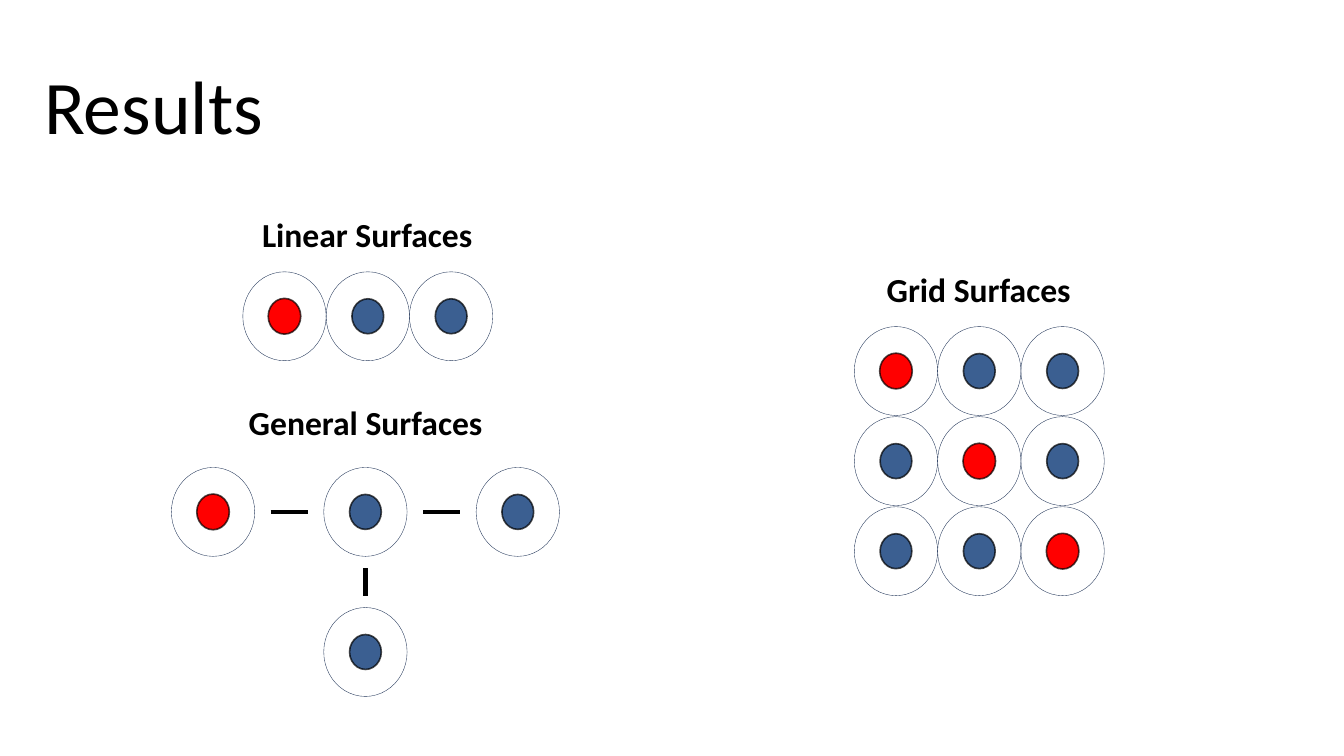
from dataclasses import dataclass

import pptx
import pptx.dml.color
import pptx.enum.shapes
import pptx.enum.text
import pptx.oxml.ns
import pptx.util
from lxml import etree

Cm = pptx.util.Cm
Pt = pptx.util.Pt
Color = pptx.dml.color.RGBColor
Align = pptx.enum.text.PP_ALIGN
Anchor = pptx.enum.text.MSO_ANCHOR


@dataclass(frozen=True)
class Theme:
    font: str = "Calibri"
    title_size: float = 54
    heading_size: float = 24
    ring_line: float = 0.25
    core_line: float = 1.17
    link_line: float = 3
    black: Color = Color(0x00, 0x00, 0x00)
    ring: Color = Color(0x1E, 0x32, 0x56)
    blue: Color = Color(0x3B, 0x5F, 0x91)
    red: Color = Color(0xFF, 0x00, 0x00)
    core_line_opacity: int = 69


THEME = Theme()


# All lengths below are centimetres
@dataclass(frozen=True)
class Box:
    left: float
    top: float
    width: float
    height: float


@dataclass(frozen=True)
class Particle:
    x: float
    y: float
    marked: bool = False


@dataclass(frozen=True)
class Link:
    start: Particle
    end: Particle
    length: float


RING_WIDTH, RING_HEIGHT = 2.1, 2.24
ROW_PITCH = 2.27

# Particle arrangements
LINEAR = [Particle(7.17 + i * RING_WIDTH, 7.97, i == 0) for i in range(3)]
GRID = [
    Particle(22.58 + column * RING_WIDTH, 9.35 + row * ROW_PITCH, row == column)
    for row in range(3)
    for column in range(3)
]
LEFT, CENTRE, RIGHT = [Particle(5.37 + i * 3.84, 12.9, i == 0) for i in range(3)]
BOTTOM = Particle(CENTRE.x, 16.43)
LINKS = [
    Link(LEFT, CENTRE, 0.94),
    Link(CENTRE, RIGHT, 0.94),
    Link(CENTRE, BOTTOM, 0.69),
]


def place(shape, box: Box) -> None:
    shape.left, shape.top = Cm(box.left), Cm(box.top)
    shape.width, shape.height = Cm(box.width), Cm(box.height)


def write_text(shape, text: str, size: float, bold: bool, align, anchor) -> None:
    frame = shape.text_frame
    frame.word_wrap = True
    frame.auto_size = pptx.enum.text.MSO_AUTO_SIZE.NONE
    frame.vertical_anchor = anchor
    paragraph = frame.paragraphs[0]
    paragraph.alignment = align
    paragraph.line_spacing = 0.9
    run = paragraph.add_run()
    run.text = text
    run.font.name = THEME.font
    run.font.size = Pt(size)
    run.font.bold = bold
    run.font.color.rgb = THEME.black


def write_heading(shape, text: str) -> None:
    write_text(shape, text, THEME.heading_size, True, Align.CENTER, Anchor.BOTTOM)
    shape.text_frame.paragraphs[0].space_before = Pt(10)


def add_heading(slide, text: str, box: Box) -> None:
    shape = slide.shapes.add_textbox(0, 0, 0, 0)
    place(shape, box)
    write_heading(shape, text)


def add_oval(slide, centre: Particle, width: float, height: float,
             line_color: Color, line_width: float):
    shape = slide.shapes.add_shape(
        pptx.enum.shapes.MSO_SHAPE.OVAL,
        Cm(centre.x - width / 2), Cm(centre.y - height / 2), Cm(width), Cm(height))
    shape.shadow.inherit = False
    shape.fill.background()
    shape.line.color.rgb = line_color
    shape.line.width = Pt(line_width)
    return shape


def add_particle(slide, particle: Particle) -> None:
    add_oval(slide, particle, RING_WIDTH, RING_HEIGHT, THEME.ring, THEME.ring_line)
    width, height = (0.82, 0.9) if particle.marked else (0.8, 0.88)
    core = add_oval(slide, particle, width, height, THEME.black, THEME.core_line)
    core.fill.solid()
    core.fill.fore_color.rgb = THEME.red if particle.marked else THEME.blue
    # Slightly transparent outline
    qn = pptx.oxml.ns.qn
    line_color = core.line._get_or_add_ln().find(".//" + qn("a:srgbClr"))
    alpha = etree.SubElement(line_color, qn("a:alpha"))
    alpha.set("val", str(THEME.core_line_opacity * 1000))


def add_link(slide, link: Link) -> None:
    """Draw a short dash centred between two particles."""
    start, end = link.start, link.end
    middle_x, middle_y = (start.x + end.x) / 2, (start.y + end.y) / 2
    horizontal = start.y == end.y
    half_x = link.length / 2 if horizontal else 0
    half_y = 0 if horizontal else link.length / 2
    connector = slide.shapes.add_connector(
        pptx.enum.shapes.MSO_CONNECTOR.STRAIGHT,
        Cm(middle_x - half_x), Cm(middle_y - half_y),
        Cm(middle_x + half_x), Cm(middle_y + half_y))
    connector.line.color.rgb = THEME.black
    connector.line.width = Pt(THEME.link_line)
    etree.SubElement(connector._element.spPr, pptx.oxml.ns.qn("a:effectLst"))


def main() -> None:
    presentation = pptx.Presentation()
    presentation.slide_width, presentation.slide_height = Cm(33.87), Cm(19.05)
    comparison_layout = presentation.slide_layouts[4]
    slide = presentation.slides.add_slide(comparison_layout)

    # Title and first heading
    title, linear_heading, *unused = slide.placeholders
    for placeholder in unused:
        placeholder._element.getparent().remove(placeholder._element)
    place(title, Box(0.86, 0.94, 29.21, 3.68))
    write_text(title, "Results", THEME.title_size, False, Align.LEFT, Anchor.MIDDLE)
    place(linear_heading, Box(1.65, 5.08, 15.21, 1.47))
    write_heading(linear_heading, "Linear Surfaces")

    # Other headings
    add_heading(slide, "General Surfaces", Box(1.57, 9.6, 15.29, 1.68))
    add_heading(slide, "Grid Surfaces", Box(17.02, 6.25, 15.29, 1.68))

    # Particles and the links between them
    for particle in [*LINEAR, LEFT, CENTRE, RIGHT, BOTTOM, *GRID]:
        add_particle(slide, particle)
    for link in LINKS:
        add_link(slide, link)

    presentation.save("out.pptx")


if __name__ == "__main__":
    main()
